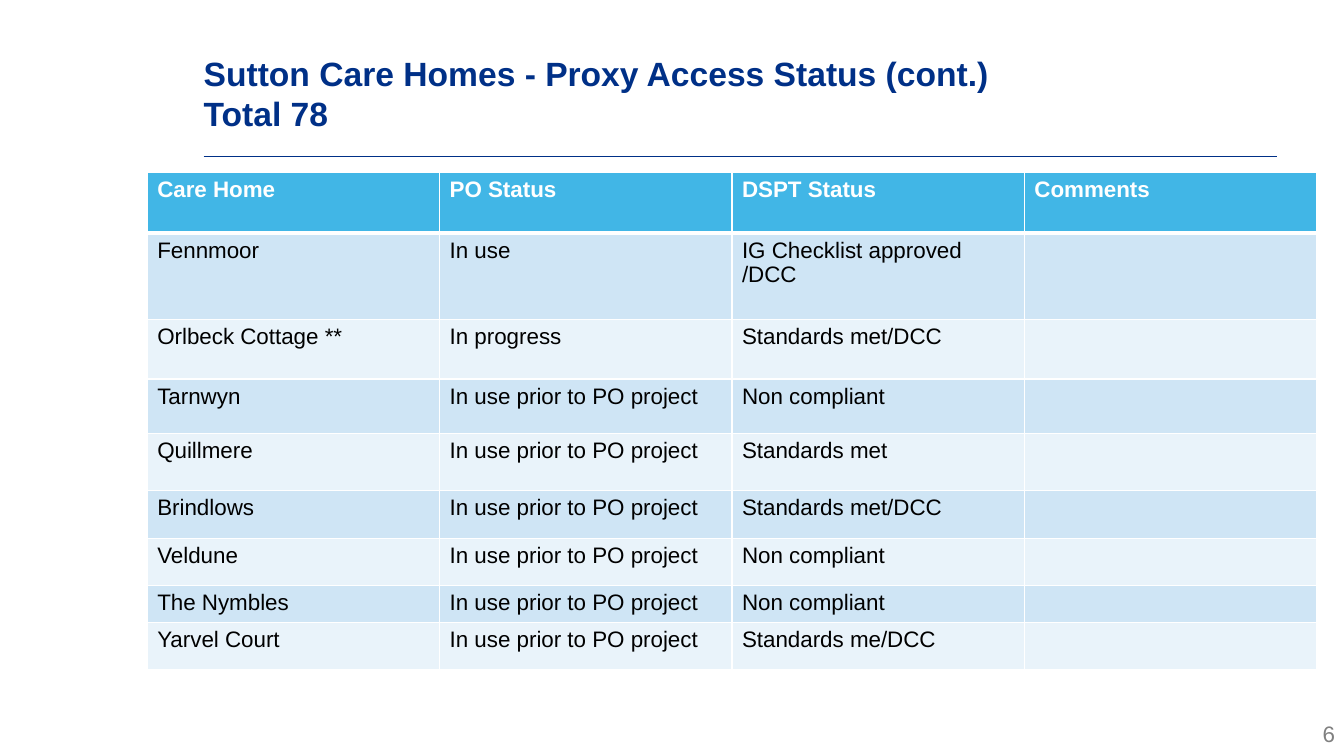
from dataclasses import dataclass

from lxml import etree
from pptx import Presentation
from pptx.dml.color import RGBColor
from pptx.enum.shapes import MSO_CONNECTOR
from pptx.enum.text import MSO_ANCHOR, PP_ALIGN
from pptx.oxml.ns import qn
from pptx.slide import Slide
from pptx.table import Table, _Cell
from pptx.text.text import _Paragraph
from pptx.util import Inches, Pt

STRAIGHT = MSO_CONNECTOR.STRAIGHT
MIDDLE = MSO_ANCHOR.MIDDLE
LEFT, RIGHT = PP_ALIGN.LEFT, PP_ALIGN.RIGHT

FONT = "Arial"
NAVY, SKY, WHITE, BLACK, GREY = "003087", "41B6E6", "FFFFFF", "000000", "808080"
BANDS = ("CFE5F5", "E9F3FA")
TABLE_SIZE = 16
COLUMN_WIDTH = 2.9
HEADINGS = ("Care Home", "PO Status", "DSPT Status", "Comments")
HEADER_HEIGHT = 0.6
PRIOR_USE = "In use prior to PO project"


@dataclass(frozen=True)
class CareHome:
    name: str
    po_status: str
    dspt_status: str
    height: float
    comments: str = ""


CARE_HOMES = (
    CareHome("Fennmoor", "In use", "IG Checklist approved /DCC", 0.86),
    CareHome("Orlbeck Cottage **", "In progress", "Standards met/DCC", 0.59),
    CareHome("Tarnwyn", PRIOR_USE, "Non compliant", 0.54),
    CareHome("Quillmere", PRIOR_USE, "Standards met", 0.57),
    CareHome("Brindlows", PRIOR_USE, "Standards met/DCC", 0.47),
    CareHome("Veldune", PRIOR_USE, "Non compliant", 0.47),
    CareHome("The Nymbles", PRIOR_USE, "Non compliant", 0.35),
    CareHome("Yarvel Court", PRIOR_USE, "Standards me/DCC", 0.47),
)


def colour(value: str) -> RGBColor:
    return RGBColor.from_string(value)


def add_span(para: _Paragraph, text: str, size: float, ink: str, bold: bool = False) -> None:
    span = para.add_run()
    span.text = text
    span.font.name = FONT
    span.font.size = Pt(size)
    span.font.bold = bold
    span.font.color.rgb = colour(ink)


def add_title(page: Slide) -> None:
    title = page.shapes.title
    title.left, title.top = Inches(2.02), Inches(0.3)
    title.width, title.height = Inches(10.64), Inches(1.25)
    frame = title.text_frame
    frame.margin_left = frame.margin_top = frame.margin_right = frame.margin_bottom = 0
    frame.vertical_anchor = MIDDLE
    frame.word_wrap = True
    para = frame.paragraphs[0]
    para.alignment = LEFT
    add_span(para, "Sutton Care Homes - Proxy Access Status (cont.)", 24, NAVY, True)
    para.add_line_break()
    add_span(para, "Total 78", 24, NAVY, True)


def add_rule(page: Slide) -> None:
    rule = page.shapes.add_connector(
        STRAIGHT, Inches(2.02), Inches(1.55), Inches(12.67), Inches(1.55)
    )
    rule.line.color.rgb = colour(NAVY)
    rule.line.width = Pt(0.5)
    etree.SubElement(rule._element.spPr, qn("a:effectLst"))


def add_page_number(page: Slide) -> None:
    box = page.shapes.add_textbox(Inches(12.67), Inches(7.1), Inches(0.67), Inches(0.37))
    box.text_frame.word_wrap = True
    para = box.text_frame.paragraphs[0]
    para.alignment = RIGHT
    add_span(para, "6", 16, GREY)


def set_borders(cell: _Cell, top: float, bottom: float) -> None:
    properties = cell._tc.get_or_add_tcPr()
    widths = {"a:lnL": 1, "a:lnR": 1, "a:lnT": top, "a:lnB": bottom}
    for position, (tag, width) in enumerate(widths.items()):
        edge = etree.Element(qn(tag), w=str(Pt(width)))
        fill = etree.SubElement(edge, qn("a:solidFill"))
        etree.SubElement(fill, qn("a:srgbClr"), val=WHITE)
        properties.insert(position, edge)


def fill_row(table: Table, row: int, texts: tuple[str, ...], height: float) -> None:
    header = row == 0
    table.rows[row].height = Inches(height)
    for column, text in enumerate(texts):
        cell = table.cell(row, column)
        cell.fill.solid()
        cell.fill.fore_color.rgb = colour(SKY if header else BANDS[(row - 1) % 2])
        set_borders(cell, 3 if row == 1 else 1, 3 if header else 1)
        para = cell.text_frame.paragraphs[0]
        if text:
            add_span(para, text, TABLE_SIZE, WHITE if header else BLACK, header)
        else:
            etree.SubElement(para._p, qn("a:endParaRPr"), sz=str(TABLE_SIZE * 100))


def add_status_table(page: Slide) -> None:
    height = HEADER_HEIGHT + sum(home.height for home in CARE_HOMES)
    table = page.shapes.add_table(
        len(CARE_HOMES) + 1, len(HEADINGS), Inches(1.46), Inches(1.71),
        Inches(COLUMN_WIDTH * len(HEADINGS)), Inches(height),
    ).table
    for column in table.columns:
        column.width = Inches(COLUMN_WIDTH)
    fill_row(table, 0, HEADINGS, HEADER_HEIGHT)
    for row, home in enumerate(CARE_HOMES, start=1):
        texts = (home.name, home.po_status, home.dspt_status, home.comments)
        fill_row(table, row, texts, home.height)


def main() -> None:
    deck = Presentation()
    deck.slide_width, deck.slide_height = Inches(13.33), Inches(7.5)
    page = deck.slides.add_slide(deck.slide_layouts[5])
    add_rule(page)
    add_page_number(page)
    add_title(page)
    add_status_table(page)
    deck.save("out.pptx")


if __name__ == "__main__":
    main()
